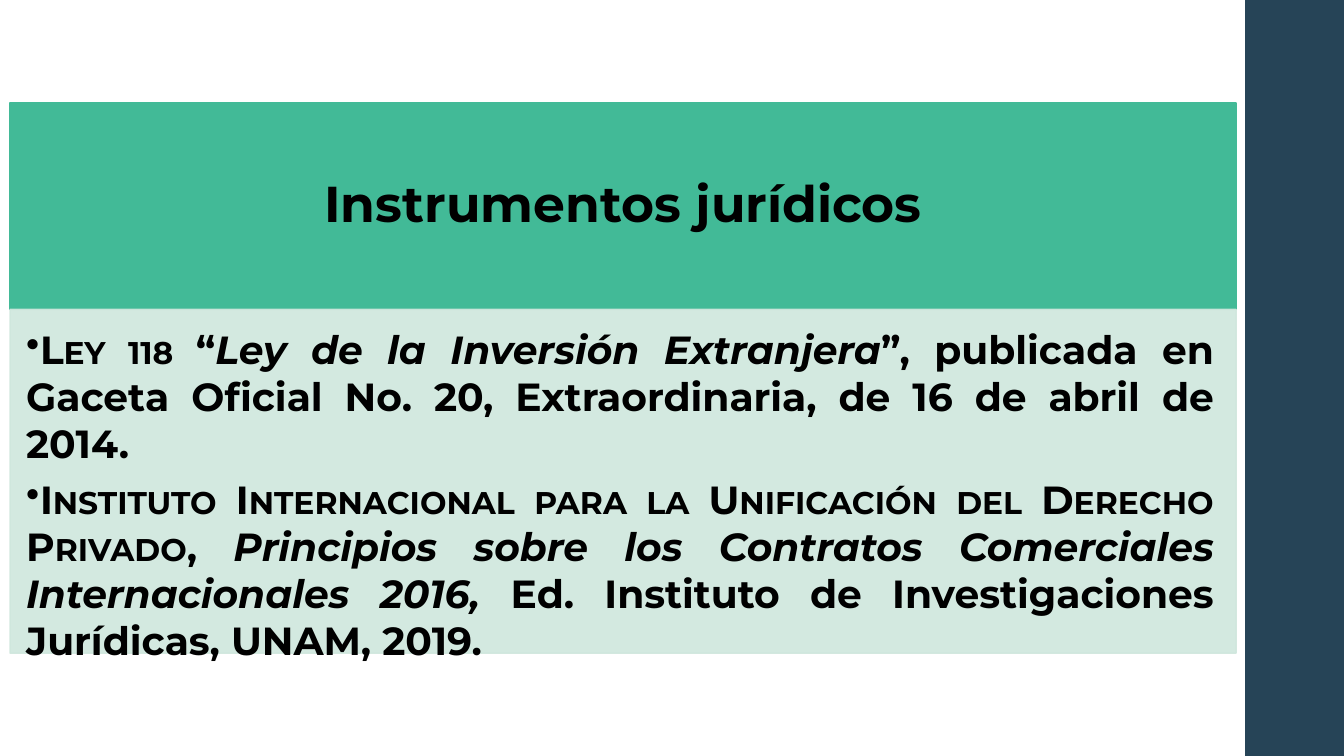
from lxml import etree
from pptx import Presentation
from pptx.dml.color import RGBColor
from pptx.enum.shapes import MSO_SHAPE
from pptx.enum.text import MSO_ANCHOR, PP_ALIGN
from pptx.oxml.ns import qn
from pptx.util import Inches, Pt

RECT = MSO_SHAPE.RECTANGLE
TOP, MIDDLE = MSO_ANCHOR.TOP, MSO_ANCHOR.MIDDLE
CENTER, JUSTIFY = PP_ALIGN.CENTER, PP_ALIGN.JUSTIFY

FONT = "Montserrat"
NAVY, GREEN, MINT, BLACK = "264457", "42BA97", "CFE7DD", "000000"

# Each run is (text, style); style is "", "italic" or "small" (small capitals)
TITLE = [[("Instrumentos jurídicos", "")]]
SOURCES = [
    [("Ley 118 ", "small"), ("“", ""),
     ("Ley de la Inversión Extranjera", "italic"),
     ("”, publicada en Gaceta Oficial No. 20, Extraordinaria, "
      "de 16 de abril de 2014.", "")],
    [("Instituto Internacional para la Unificación del Derecho Privado", "small"),
     (", ", ""),
     ("Principios sobre los Contratos Comerciales Internacionales 2016, ", "italic"),
     ("Ed. Instituto de Investigaciones Jurídicas, UNAM, 2019.", "")],
]

SLIDE_W, SLIDE_H = 13.33, 7.5
BAND_X, BAND_W = 12.35, 1
PANEL_X, PANEL_W = 0.1, 12.16
HEADER_Y, HEADER_H, BODY_H = 1.02, 2.05, 3.41


def rgb(value):
    return RGBColor.from_string(value)


def add_box(s, box, color, line_width=0, opacity=100):
    sp = s.shapes.add_shape(RECT, *map(Inches, box))
    sp.shadow.inherit = False
    paints = [sp.fill]
    if line_width:
        sp.line.width = Pt(line_width)
        paints.append(sp.line.fill)
    else:
        sp.line.fill.background()
    for paint in paints:
        paint.solid()
        paint.fore_color.rgb = rgb(color)
    if opacity < 100:
        for clr in sp._element.spPr.iter(qn("a:srgbClr")):
            etree.SubElement(clr, qn("a:alpha"), val=str(opacity * 1000))
    return sp


def write(sp, paragraphs, size, anchor, insets, layout, bullet=None):
    tf = sp.text_frame
    tf.word_wrap = True
    tf.vertical_anchor = anchor
    for side, inset in zip(("left", "top", "right", "bottom"), insets):
        setattr(tf, f"margin_{side}", Inches(inset))
    for i, runs in enumerate(paragraphs):
        p = tf.add_paragraph() if i else tf.paragraphs[0]
        for name, value in layout.items():
            setattr(p, name, value)
        if bullet:
            pPr = p._p.get_or_add_pPr()
            pPr.set("marL", "0")
            pPr.set("indent", "0")
            etree.SubElement(pPr, qn("a:buChar"), char=bullet)
        for text, style in runs:
            r = p.add_run()
            r.text = text
            formats = {"name": FONT, "size": Pt(size), "bold": True,
                       "italic": style == "italic"}
            for name, value in formats.items():
                setattr(r.font, name, value)
            r.font.color.rgb = rgb(BLACK)
            if style == "small":
                r._r.get_or_add_rPr().set("cap", "small")


prs = Presentation()
prs.slide_width, prs.slide_height = Inches(SLIDE_W), Inches(SLIDE_H)
s = prs.slides.add_slide(prs.slide_layouts[6])

add_box(s, (BAND_X, 0, BAND_W, SLIDE_H), NAVY)
header = add_box(s, (PANEL_X, HEADER_Y, PANEL_W, HEADER_H), GREEN, 1.1)
write(header, TITLE, 36, MIDDLE, (0.28, 0.16, 0.28, 0.16),
      {"alignment": CENTER, "line_spacing": 0.9})
body = add_box(s, (PANEL_X, HEADER_Y + HEADER_H, PANEL_W, BODY_H), MINT, 1.1, 90)
write(body, SOURCES, 28, TOP, (0.16, 0.16, 0.22, 0.24),
      {"alignment": JUSTIFY, "level": 1, "space_after": Pt(6)}, "•")

prs.save("out.pptx")
